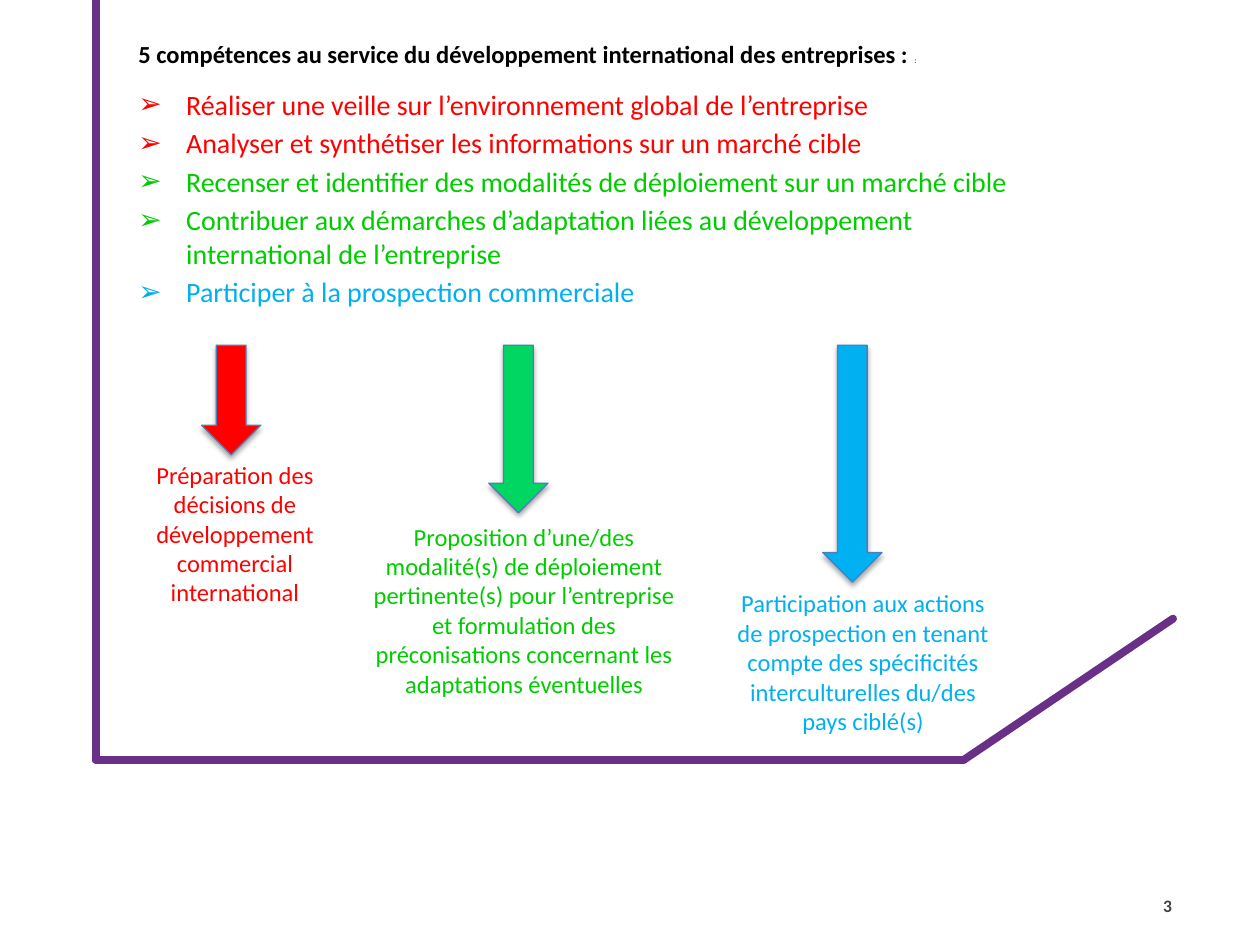
from lxml.etree import SubElement
from pptx import Presentation
from pptx.dml.color import RGBColor
from pptx.enum.shapes import MSO_CONNECTOR as Line, MSO_SHAPE as Shape
from pptx.enum.text import MSO_ANCHOR as Anchor, PP_ALIGN as Align
from pptx.oxml.ns import qn
from pptx.util import Inches, Pt

FONT = "Calibri"
HEX = {
    "frame": "683086", "edge": "4B7EBC", "black": "000000", "grey": "404040",
    "red": "FF0000", "green": "00CC00", "mint": "00D661", "blue": "00B0F0",
}
SKILLS = [
    ("Réaliser une veille sur l’environnement global de l’entreprise", "red"),
    ("Analyser et synthétiser les informations sur un marché cible", "red"),
    ("Recenser et identifier des modalités de déploiement sur un marché cible", "green"),
    ("Contribuer aux démarches d’adaptation liées au développement "
     "international de l’entreprise", "green"),
    ("Participer à la prospection commerciale", "blue"),
]
# Arrow left and height, fill, caption box, caption colour, caption
RESULTS = [
    (1.6, 0.87, "red", (0.91, 3.6, 1.91, 1.28), "red",
     "Préparation des décisions de développement commercial international"),
    (3.88, 1.33, "mint", (2.86, 4.09, 2.6, 1.51), "green",
     "Proposition d’une/des modalité(s) de déploiement pertinente(s) pour "
     "l’entreprise et formulation des préconisations concernant les "
     "adaptations éventuelles"),
    (6.53, 1.88, "blue", (5.71, 4.62, 2.28, 1.28), "blue",
     "Participation aux actions de prospection en tenant compte des "
     "spécificités interculturelles du/des pays ciblé(s)"),
]


def color(name):
    return RGBColor.from_string(HEX[name])


def add_run(para, text, size, tint, bold=False):
    run = para.add_run()
    run.text = text
    font = run.font
    font.name, font.size, font.bold = FONT, Pt(size), bold
    font.color.rgb = color(tint)


def add_box(slide, box):
    frame = slide.shapes.add_textbox(*map(Inches, box)).text_frame
    frame.word_wrap = True
    return frame


def add_bullet(para):
    props = para._p.get_or_add_pPr()
    props.set("marL", str(Inches(0.38)))
    props.set("indent", str(-Inches(0.38)))
    SubElement(props, qn("a:buFont"), typeface="Arial")
    SubElement(props, qn("a:buChar"), char="➢")


def add_shadow(shape):
    shape.shadow.inherit = False
    effects = shape._element.spPr.find(qn("a:effectLst"))
    outer = SubElement(effects, qn("a:outerShdw"), blurRad=str(Pt(3.1)),
                       dist=str(Pt(1.8)), dir="5400000", rotWithShape="0")
    tint = SubElement(outer, qn("a:srgbClr"), val=HEX["black"])
    SubElement(tint, qn("a:alpha"), val="35000")


def draw_frame(slide, points):
    for start, end in zip(points, points[1:]):
        line = slide.shapes.add_connector(
            Line.STRAIGHT, *map(Inches, start + end))
        line.line.color.rgb = color("frame")
        line.line.width = Pt(4.5)
        line.line._get_or_add_ln().set("cap", "rnd")
        SubElement(line._element.spPr, qn("a:effectLst"))


def write_skills(slide, box):
    frame = add_box(slide, box)
    head = frame.paragraphs[0]
    head.line_spacing = 0.87
    head.space_after = Pt(8)
    add_run(head, "5 compétences au service du développement international "
                  "des entreprises :\u00a0", 14, "black", True)
    add_run(head, ":", 4.5, "black")
    for text, tint in SKILLS:
        para = frame.add_paragraph()
        add_bullet(para)
        para.space_before = Pt(2.8)
        add_run(para, text, 16, tint)


def draw_result(slide, arrow_box, fill, text_box, tint, text):
    arrow = slide.shapes.add_shape(Shape.DOWN_ARROW, *map(Inches, arrow_box))
    arrow.fill.solid()
    arrow.fill.fore_color.rgb = color(fill)
    arrow.line.color.rgb = color("edge")
    arrow.line.width = Pt(0.75)
    add_shadow(arrow)
    para = add_box(slide, text_box).paragraphs[0]
    para.alignment = Align.CENTER
    add_run(para, text, 14, tint)


def write_number(slide, box):
    frame = add_box(slide, box)
    frame.vertical_anchor = Anchor.MIDDLE
    para = frame.paragraphs[0]
    para.alignment = Align.RIGHT
    add_run(para, "3", 10, "grey", True)


def main():
    deck = Presentation()
    deck.slide_width, deck.slide_height = Inches(10), Inches(7.5)
    slide = deck.slides.add_slide(deck.slide_layouts[6])
    draw_frame(slide, [(0.76, 0), (0.76, 6.03), (7.65, 6.03), (9.31, 4.91)])
    write_skills(slide, (1, 0.29, 7.4, 2.44))
    for left, height, fill, box, tint, text in RESULTS:
        draw_result(slide, (left, 2.74, 0.47, height), fill, box, tint, text)
    write_number(slide, (8.96, 6.99, 0.44, 0.4))
    deck.save("out.pptx")


if __name__ == "__main__":
    main()
